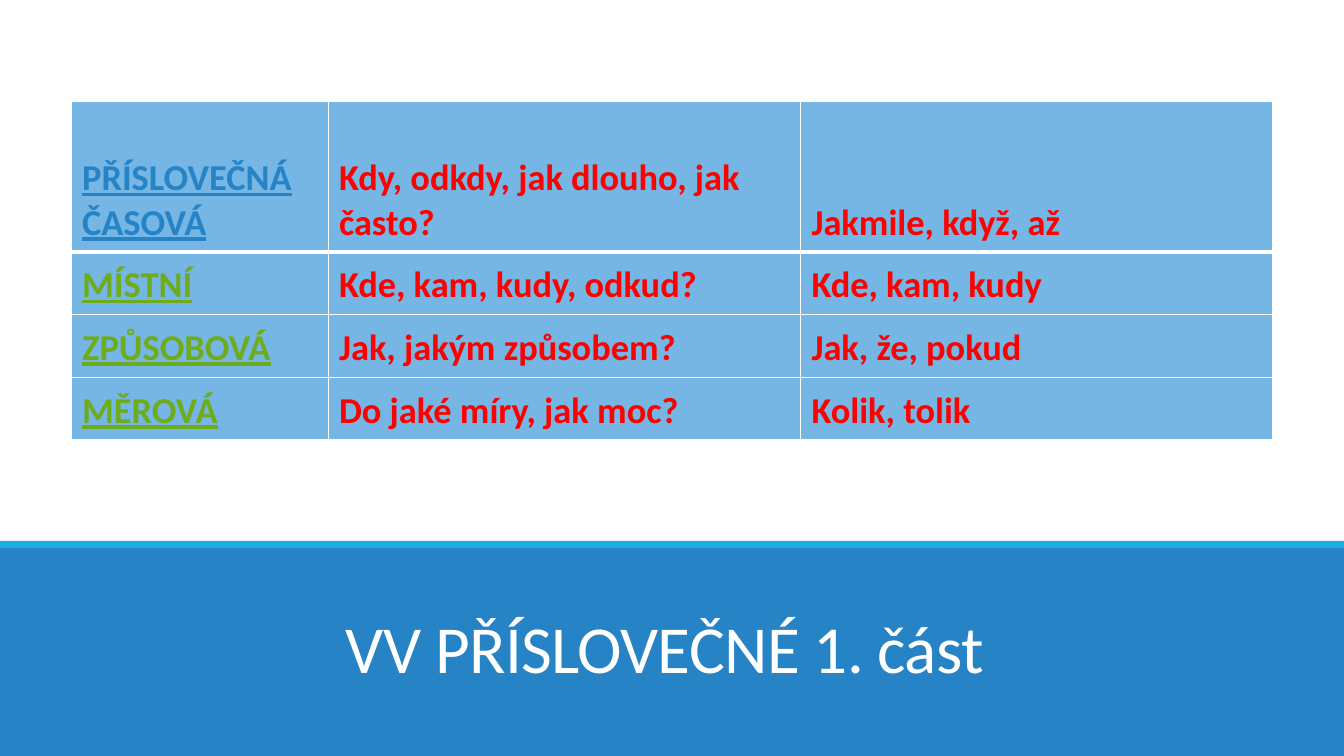
import pptx
import pptx.util
import pptx.dml.color
import pptx.enum.shapes
import pptx.enum.text
import pptx.oxml.ns
import lxml.etree
from dataclasses import dataclass

Pt = pptx.util.Pt
ANCHOR = pptx.enum.text.MSO_ANCHOR
ALIGN = pptx.enum.text.PP_ALIGN

TITLE = "VV PŘÍSLOVEČNÉ 1. část "
CLAUSES = [
    ("PŘÍSLOVEČNÁ\nČASOVÁ", "Kdy, odkdy, jak dlouho, jak často?\u00a0".replace("\u00a0", " "), "Jakmile, když, až"),
    ("MÍSTNÍ", "Kde, kam, kudy, odkud? ", "Kde, kam, kudy"),
    ("ZPŮSOBOVÁ", "Jak, jakým způsobem? ", "Jak, že, pokud"),
    ("MĚROVÁ", "Do jaké míry, jak moc? ", "Kolik, tolik"),
]


@dataclass(frozen=True)
class Theme:
    font: str = "Calibri"
    title_size: float = 48
    cell_size: float = 26
    white: str = "FFFFFF"
    band: str = "2683C6"
    stripe: str = "1CADE4"
    cell: str = "75B6E5"
    answer: str = "FF0000"
    first_name: str = "2683C6"
    name: str = "6EAC1C"


THEME = Theme()
SLIDE_W, SLIDE_H = 960, 540
BAND_TOP, STRIPE_TOP, STRIPE_H = 390, 386.4, 5.04
TABLE_LEFT, TABLE_TOP = 51, 72.5
COLUMN_WIDTHS = [183.5, 337.5, 337]
ROW_HEIGHTS = [107.5] + [44.75] * 3
THIN, THICK = 1, 3


def rgb(value):
    return pptx.dml.color.RGBColor.from_string(value)


def write(frame, text, *, size, color, bold=False, underline=False,
          align=ALIGN.LEFT, leading=None, tracking=None):
    frame.word_wrap = True
    frame.text = text
    for paragraph in frame.paragraphs:
        paragraph.alignment = align
        if leading:
            paragraph.line_spacing = leading
        for run in paragraph.runs:
            font = run.font
            font.name, font.size = THEME.font, Pt(size)
            font.bold, font.underline = bold, underline
            font.color.rgb = rgb(color)
            if tracking is not None:
                font._element.set("spc", str(round(tracking * 100)))


def add_bar(slide, top, height, color):
    bar = slide.shapes.add_shape(
        pptx.enum.shapes.MSO_SHAPE.RECTANGLE, 0, Pt(top), Pt(SLIDE_W), Pt(height))
    bar.shadow.inherit = False
    bar.fill.solid()
    bar.fill.fore_color.rgb = rgb(color)
    bar.line.fill.background()


def set_borders(cell, widths):
    qn = pptx.oxml.ns.qn
    properties = cell._tc.get_or_add_tcPr()
    for side, width in widths.items():
        line = lxml.etree.SubElement(properties, qn(f"a:ln{side}"), w=str(Pt(width)))
        fill = lxml.etree.SubElement(line, qn("a:solidFill"))
        lxml.etree.SubElement(fill, qn("a:srgbClr"), val=THEME.white)


def add_clause_table(slide):
    table = slide.shapes.add_table(
        len(CLAUSES), len(COLUMN_WIDTHS), Pt(TABLE_LEFT), Pt(TABLE_TOP),
        Pt(sum(COLUMN_WIDTHS)), Pt(sum(ROW_HEIGHTS))).table
    for column, width in zip(table.columns, COLUMN_WIDTHS):
        column.width = Pt(width)
    for row, height in zip(table.rows, ROW_HEIGHTS):
        row.height = Pt(height)
    for r, clause in enumerate(CLAUSES):
        for c, text in enumerate(clause):
            cell = table.cell(r, c)
            cell.vertical_anchor = ANCHOR.BOTTOM
            cell.margin_left = cell.margin_right = Pt(7.7)
            cell.margin_top = cell.margin_bottom = Pt(5)
            set_borders(cell, {"L": THIN, "R": THIN,
                               "T": THICK if r == 1 else THIN,
                               "B": THICK if r == 0 else THIN})
            cell.fill.solid()
            cell.fill.fore_color.rgb = rgb(THEME.cell)
            name_color = THEME.first_name if r == 0 else THEME.name
            write(cell.text_frame, text, size=THEME.cell_size, bold=True,
                  color=name_color if c == 0 else THEME.answer, underline=c == 0)


def place_title(slide):
    title = slide.shapes.title
    title.left, title.top, title.width, title.height = Pt(84), Pt(413.5), Pt(792), Pt(81)
    title.text_frame.vertical_anchor = ANCHOR.BOTTOM
    write(title.text_frame, TITLE, size=THEME.title_size, color=THEME.white,
          align=ALIGN.CENTER, leading=0.85, tracking=-0.5)
    slide.shapes._spTree.append(title._element)


def main():
    deck = pptx.Presentation()
    deck.slide_width, deck.slide_height = Pt(SLIDE_W), Pt(SLIDE_H)
    slide = deck.slides.add_slide(deck.slide_layouts[5])
    slide.background.fill.solid()
    slide.background.fill.fore_color.rgb = rgb(THEME.white)
    add_bar(slide, BAND_TOP, SLIDE_H - BAND_TOP, THEME.band)
    place_title(slide)
    add_bar(slide, STRIPE_TOP, STRIPE_H, THEME.stripe)
    add_clause_table(slide)
    deck.save("out.pptx")


if __name__ == "__main__":
    main()
